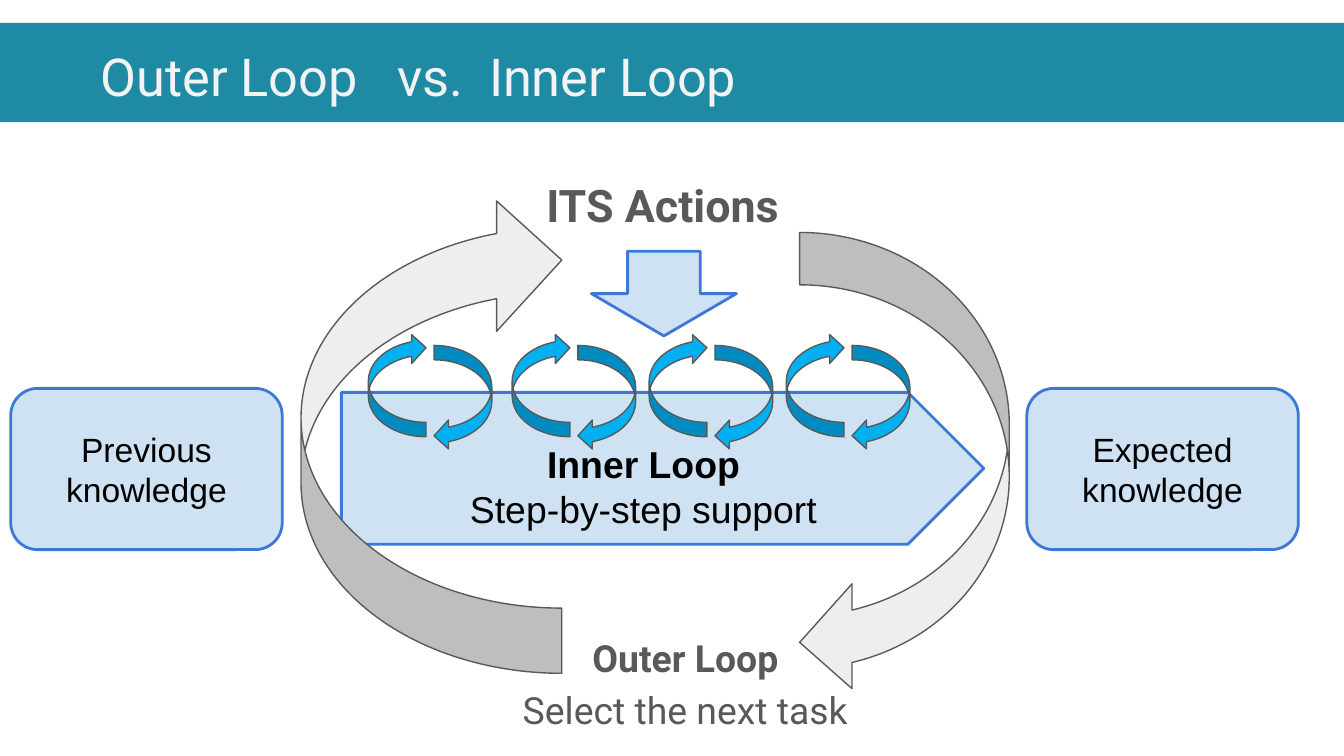
from lxml import etree
from pptx import Presentation, util as u
from pptx.dml.color import RGBColor
from pptx.enum import shapes, text
from pptx.oxml import ns

PX = 9144  # EMU per px, 100 px to the inch
TEAL = RGBColor(0x1E, 0x8A, 0xA4)
OFF_WHITE = RGBColor(0xF3, 0xF3, 0xF3)
PALE_BLUE = RGBColor(0xCF, 0xE2, 0xF3)
BLUE = RGBColor(0x3C, 0x78, 0xD8)
SKY = RGBColor(0x00, 0xB0, 0xF0)
LIGHT_GREY = RGBColor(0xEE, 0xEE, 0xEE)
DARK_GREY = RGBColor(0x59, 0x59, 0x59)
BLACK = RGBColor(0, 0, 0)

KIND = shapes.MSO_SHAPE
TOP, MIDDLE, BOTTOM = (text.MSO_ANCHOR.TOP, text.MSO_ANCHOR.MIDDLE,
                       text.MSO_ANCHOR.BOTTOM)
CENTER = text.PP_ALIGN.CENTER


def add_part(parent, kind, box, fill, line=None, weight=1.5, rotation=0):
    part = parent.add_shape(kind, *[n * PX for n in box])
    part.shadow.inherit = False
    part.rotation = rotation
    part.fill.solid()
    part.fill.fore_color.rgb = fill
    if line is None:
        part.line.fill.background()
    else:
        part.line.color.rgb = line
        part.line.width = u.Pt(weight)
    return part


def write(part, paragraphs, size, font, color, anchor=TOP, align=CENTER, spacing=None):
    """Fill the part with paragraphs, each a list of (line, bold) pairs."""
    frame = part.text_frame
    frame.word_wrap = True
    frame.vertical_anchor = anchor
    frame.margin_left = frame.margin_right = 10 * PX
    frame.margin_top = frame.margin_bottom = 10 * PX
    for i, lines in enumerate(paragraphs):
        paragraph = frame.add_paragraph() if i else frame.paragraphs[0]
        paragraph.alignment = align
        paragraph.line_spacing = spacing
        for j, (wording, bold) in enumerate(lines):
            if j:
                paragraph.add_line_break()
            run = paragraph.add_run()
            run.text = wording
            run.font.size = u.Pt(size)
            run.font.name = font
            run.font.bold = bold
            run.font.color.rgb = color


prs = Presentation()
prs.slide_width = 1000 * PX
prs.slide_height = prs.slide_width * 9 // 16
slide = prs.slides.add_slide(prs.slide_layouts[6])
canvas = slide.shapes

# Title band, with tab stops that set the three parts of the title apart
add_part(canvas, KIND.RECTANGLE, (0, 17, 1000, 74), TEAL)
title = canvas.add_textbox(65 * PX, 23 * PX, 932 * PX, 63 * PX)
title_props = title.text_frame.paragraphs[0]._p.get_or_add_pPr()
tabs = etree.SubElement(title_props, ns.qn("a:tabLst"))
for stop in (221, 289):
    etree.SubElement(tabs, ns.qn("a:tab"), pos=str(stop * PX), algn="l")
write(title, [[("Outer Loop\tvs.\tInner Loop", False)]], 28, "Roboto", OFF_WHITE,
      align=text.PP_ALIGN.LEFT)

# Inner loop and the actions that feed it
inner_loop = add_part(canvas, KIND.PENTAGON, (254, 292, 478, 113), PALE_BLUE, BLUE)
write(inner_loop, [[("Inner Loop", True)], [("Step-by-step support", False)]],
      20, "Arial", BLACK, BOTTOM)
add_part(canvas, KIND.DOWN_ARROW, (440, 187, 108, 63), PALE_BLUE, BLUE)
actions = canvas.add_textbox(396 * PX, 116 * PX, 194 * PX, 47 * PX)
write(actions, [[("ITS Actions", True)]], 24, "Roboto", DARK_GREY, spacing=1.15)

# Outer loop
for box, rotation in (((595, 173, 156, 344), 0), ((224, 145, 194, 356), 180)):
    add_part(canvas, KIND.CURVED_LEFT_ARROW, box, LIGHT_GREY, DARK_GREY, 0.75, rotation)

# One small cycle per step
for left in (585, 483, 274, 381):
    cycle = canvas.add_group_shape().shapes
    for box, rotation in (((left + 49, 257, 43, 78), 0), ((left, 248, 43, 77), 180)):
        add_part(cycle, KIND.CURVED_LEFT_ARROW, box, SKY, DARK_GREY, 0.75, rotation)

outer_loop = canvas.add_textbox(369 * PX, 458 * PX, 282 * PX, 47 * PX)
write(outer_loop, [[("Outer Loop", True), ("Select the next task", False)]],
      20, "Roboto", DARK_GREY, spacing=1.15)

# Knowledge before and after
for left, wording in ((8, "Previous knowledge"), (764, "Expected knowledge")):
    knowledge = add_part(canvas, KIND.ROUNDED_RECTANGLE, (left, 289, 202, 120),
                         PALE_BLUE, BLUE)
    write(knowledge, [[(wording, False)]], 18, "Arial", BLACK, MIDDLE)

prs.save("out.pptx")
